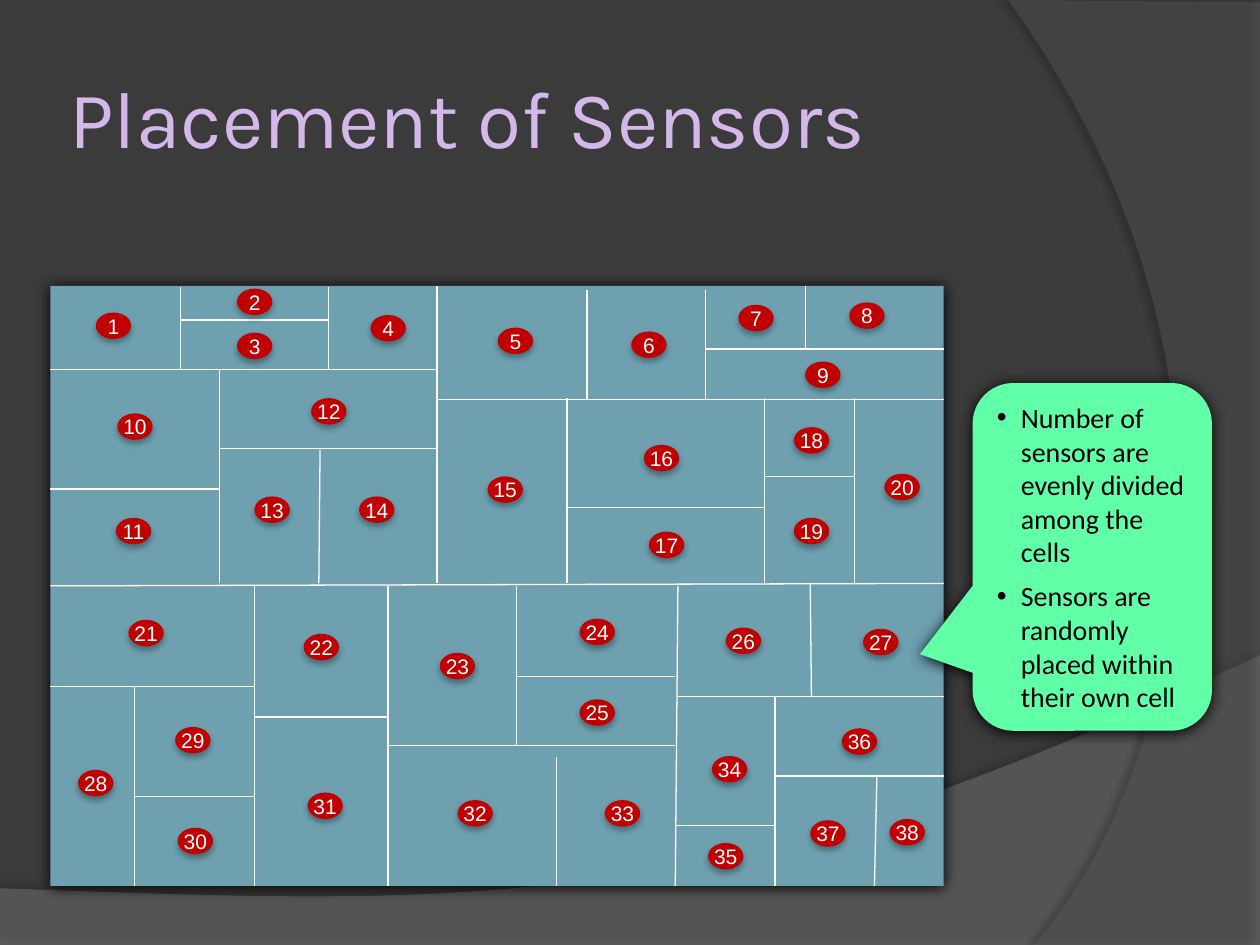
from dataclasses import dataclass
from itertools import chain

from lxml import etree
from pptx import Presentation
from pptx.dml.color import RGBColor
from pptx.enum.shapes import MSO_CONNECTOR, MSO_SHAPE
from pptx.enum.text import MSO_ANCHOR, MSO_AUTO_SIZE, PP_ALIGN
from pptx.oxml.ns import qn
from pptx.util import Pt

STRAIGHT = MSO_CONNECTOR.STRAIGHT
RECTANGLE, OVAL = MSO_SHAPE.RECTANGLE, MSO_SHAPE.OVAL
CALLOUT = MSO_SHAPE.ROUNDED_RECTANGULAR_CALLOUT
MIDDLE = MSO_ANCHOR.MIDDLE
NO_AUTOFIT = MSO_AUTO_SIZE.NONE
LEFT_ALIGN, CENTER = PP_ALIGN.LEFT, PP_ALIGN.CENTER


@dataclass(frozen=True)
class TextStyle:
    font: str
    size: float
    color: str


@dataclass(frozen=True)
class Shadow:
    opacity: int
    blur: float
    distance: float
    angle: int


@dataclass(frozen=True)
class Theme:
    background: str = "3B3B3B"
    lower_swoosh: str = "7F7F7F"
    right_swoosh: str = "5E5E5E"
    field: str = "6EA0B0"
    wall: str = "FFFFFF"
    wall_width: float = 0.75
    sensor: str = "C00000"
    note: str = "61FFA8"
    title_text: TextStyle = TextStyle("Karla", 46, "D5B8EA")
    sensor_text: TextStyle = TextStyle("Arial", 12, "FFFFFF")
    note_text: TextStyle = TextStyle("Calibri", 16, "000000")
    panel_shadow: Shadow = Shadow(100, 8.5, 1, 90)
    sensor_shadow: Shadow = Shadow(32, 3.5, 2.2, 90)


@dataclass(frozen=True)
class Swoosh:
    color: str
    opacity: int
    corners: tuple
    curve: tuple
    shadow: Shadow


@dataclass(frozen=True)
class Wall:
    x1: float
    y1: float
    x2: float
    y2: float


THEME = Theme()
SWOOSHES = (
    Swoosh(THEME.lower_swoosh, 45, ((0, 507.6), (0, 540), (720, 540)),
           ((720, 374.4), (402.5, 524.9), (281.5, 517.7), (0, 507.6)), Shadow(35, 4, 3.5, 270)),
    Swoosh(THEME.right_swoosh, 40, ((720, 1.4), (720, 540)),
           ((591.1, 540), (673.2, 445.7), (733, 216), (576, 0)), Shadow(45, 4, 4, 180)),
)
CURVE_STEPS = 60
LEFT, TOP, RIGHT, BOTTOM = 28.8, 163.4, 539.3, 506.2
CENTRE_LEFT, CENTRE_RIGHT = 334.8, 333.4
CENTRE_WALL = Wall(LEFT, CENTRE_LEFT, RIGHT, CENTRE_RIGHT)

HORIZONTAL_WALLS = (
    (211, LEFT, 249.8), (182.9, 103, 187.9), (256.3, 125.3, 249.8), (279.4, LEFT, 125.3),
    (228.2, 249.8, RIGHT), (199.4, 403.2, RIGHT), (290.2, 324, 437), (272.2, 437, 488.2),
    (392.4, LEFT, 145.4), (409.7, 145.4, 221.8), (455, 77, 145.4), (426.2, 221.8, 385.9),
    (386.6, 295.2, 385.9), (398.2, 387.4, RIGHT), (443.5, 442.8, RIGHT), (471.6, 385.9, 442.8),
)
VERTICAL_WALLS = (
    (249.8, TOP, CENTRE_RIGHT), (103, 164.2, 211), (187.9, 164.2, 211),
    (125.3, 211, CENTRE_RIGHT), (324, 227.5, CENTRE_RIGHT), (335.5, 165.6, 228.2),
    (403.2, 165.6, 228.2), (460.1, TOP, 199.4), (437, 227.5, CENTRE_RIGHT),
    (488.2, 227.5, CENTRE_RIGHT), (221.8, CENTRE_LEFT, BOTTOM), (145.4, CENTRE_LEFT, BOTTOM),
    (77, 392.4, BOTTOM), (295.2, CENTRE_LEFT, 426.2), (318.2, 432.7, BOTTOM),
    (442.8, 398.2, BOTTOM),
)
SLANTED_WALLS = (
    Wall(387.4, CENTRE_LEFT, 385.9, BOTTOM), Wall(182.9, 257, 182.2, CENTRE_RIGHT),
    Wall(463, CENTRE_RIGHT, 463.7, 398.2), Wall(501.1, 443.5, 499.7, BOTTOM),
)
SENSOR_WIDTH, SENSOR_HEIGHT = 20.2, 15.1
SENSORS = (
    (54.7, 178.6), (135.4, 164.9), (135.4, 190.1), (211.7, 180), (284.4, 187.2),
    (360.7, 189.4), (421.9, 174.2), (485.3, 172.8), (460.1, 206.6), (67, 236.2),
    (66.2, 295.9), (177.8, 227.5), (145.4, 283.7), (205.2, 283.7), (278.6, 272.2),
    (367.9, 254.2), (370.8, 303.8), (453.6, 244.1), (453.6, 295.9), (505.4, 270.7),
    (73.4, 354.2), (173.5, 362.2), (251.3, 373), (331.2, 353.5), (331.2, 399.6),
    (414.7, 358.6), (493.2, 359.3), (44.6, 439.9), (100.1, 415.4), (101.5, 473),
    (175.7, 452.9), (261.4, 457.2), (345.6, 457.2), (406.8, 432), (404.6, 481.7),
    (481, 416.2), (463, 468.7), (508.3, 468),
)
NOTES = (
    "Number of sensors are evenly divided among the cells",
    "Sensors are randomly placed within their own cell",
)
NOTE_INDENT = 13.7


def add_run(paragraph, text: str, style: TextStyle) -> None:
    run = paragraph.add_run()
    run.text = text
    run.font.name = style.font
    run.font.size = Pt(style.size)
    run.font.color.rgb = RGBColor.from_string(style.color)


def set_margins(frame, margin: float) -> None:
    frame.margin_left = frame.margin_right = Pt(margin)
    frame.margin_top = frame.margin_bottom = Pt(margin)


def finish_shape(shape, color: str, shadow: Shadow) -> None:
    shape.fill.solid()
    shape.fill.fore_color.rgb = RGBColor.from_string(color)
    shape.line.fill.background()
    shape.shadow.inherit = False
    effects = shape._element.spPr.find(qn("a:effectLst"))
    outer = etree.SubElement(effects, qn("a:outerShdw"), blurRad=str(Pt(shadow.blur)),
                             dist=str(Pt(shadow.distance)), dir=str(shadow.angle * 60000),
                             algn="ctr", rotWithShape="0")
    shade = etree.SubElement(outer, qn("a:srgbClr"), val="000000")
    etree.SubElement(shade, qn("a:alpha"), val=str(shadow.opacity * 1000))


def add_box(slide, kind, left: float, top: float, width: float, height: float,
            color: str, shadow: Shadow):
    shape = slide.shapes.add_shape(kind, Pt(left), Pt(top), Pt(width), Pt(height))
    finish_shape(shape, color, shadow)
    return shape


def curve_point(curve: tuple, t: float) -> tuple[float, float]:
    weights = ((1 - t) ** 3, 3 * t * (1 - t) ** 2, 3 * t ** 2 * (1 - t), t ** 3)
    x, y = (sum(w * value for w, value in zip(weights, axis)) for axis in zip(*curve))
    return x, y


def add_swoosh(slide, swoosh: Swoosh) -> None:
    curve = [curve_point(swoosh.curve, step / CURVE_STEPS) for step in range(CURVE_STEPS + 1)]
    start, *others = [(Pt(x), Pt(y)) for x, y in chain(swoosh.corners, curve)]
    builder = slide.shapes.build_freeform(*start)
    builder.add_line_segments(others, close=True)
    shape = builder.convert_to_shape()
    finish_shape(shape, swoosh.color, swoosh.shadow)
    fill_color = shape._element.spPr.find(qn("a:solidFill")).find(qn("a:srgbClr"))
    etree.SubElement(fill_color, qn("a:alpha"), val=str(swoosh.opacity * 1000))


def add_wall(slide, wall: Wall):
    connector = slide.shapes.add_connector(
        STRAIGHT, Pt(wall.x1), Pt(wall.y1), Pt(wall.x2), Pt(wall.y2))
    connector.line.color.rgb = RGBColor.from_string(THEME.wall)
    connector.line.width = Pt(THEME.wall_width)
    etree.SubElement(connector._element.spPr, qn("a:effectLst"))
    return connector


def add_sensor(slide, number: int, left: float, top: float) -> None:
    shape = add_box(slide, OVAL, left, top, SENSOR_WIDTH, SENSOR_HEIGHT,
                    THEME.sensor, THEME.sensor_shadow)
    frame = shape.text_frame
    frame.word_wrap = False
    frame.vertical_anchor = MIDDLE
    set_margins(frame, 0)
    frame.paragraphs[0].alignment = CENTER
    add_run(frame.paragraphs[0], str(number), THEME.sensor_text)


def add_note(slide) -> None:
    callout = add_box(slide, CALLOUT, 555.8, 218.9, 136.8, 198.7, THEME.note, THEME.panel_shadow)
    for index, value in enumerate((-0.72, 0.28, 0.17)):
        callout.adjustments[index] = value
    frame = callout.text_frame
    frame.word_wrap = True
    frame.vertical_anchor = MIDDLE
    for index, text in enumerate(NOTES):
        paragraph = frame.add_paragraph() if index else frame.paragraphs[0]
        paragraph.alignment = LEFT_ALIGN
        paragraph.space_after = Pt(0 if index else 6)
        properties = paragraph._p.get_or_add_pPr()
        properties.set("marL", str(Pt(NOTE_INDENT)))
        properties.set("indent", str(Pt(-NOTE_INDENT)))
        etree.SubElement(properties, qn("a:buFont"), typeface="Arial")
        etree.SubElement(properties, qn("a:buChar"), char="•")
        add_run(paragraph, text, THEME.note_text)


def format_title(title) -> None:
    title.left, title.top, title.width, title.height = Pt(36), Pt(21.6), Pt(588.2), Pt(90)
    frame = title.text_frame
    frame.auto_size = NO_AUTOFIT
    frame.vertical_anchor = MIDDLE
    set_margins(frame, 3.6)
    frame.paragraphs[0].alignment = LEFT_ALIGN
    add_run(frame.paragraphs[0], "Placement of Sensors", THEME.title_text)


def main() -> None:
    """Build the slide that shows one numbered sensor in each cell of a field."""
    presentation = Presentation()
    presentation.slide_width, presentation.slide_height = Pt(720), Pt(540)
    slide = presentation.slides.add_slide(presentation.slide_layouts[5])
    slide.background.fill.solid()
    slide.background.fill.fore_color.rgb = RGBColor.from_string(THEME.background)
    for swoosh in SWOOSHES:
        add_swoosh(slide, swoosh)
    format_title(slide.shapes.title)
    field = add_box(slide, RECTANGLE, LEFT, TOP, RIGHT - LEFT, BOTTOM - TOP,
                    THEME.field, THEME.panel_shadow)
    add_wall(slide, CENTRE_WALL).begin_connect(field, 1)
    horizontal = (Wall(x1, y, x2, y) for y, x1, x2 in HORIZONTAL_WALLS)
    vertical = (Wall(x, y1, x, y2) for x, y1, y2 in VERTICAL_WALLS)
    for wall in chain(horizontal, vertical, SLANTED_WALLS):
        add_wall(slide, wall)
    for number, (left, top) in enumerate(SENSORS, start=1):
        add_sensor(slide, number, left, top)
    add_note(slide)
    presentation.save("out.pptx")


if __name__ == "__main__":
    main()
